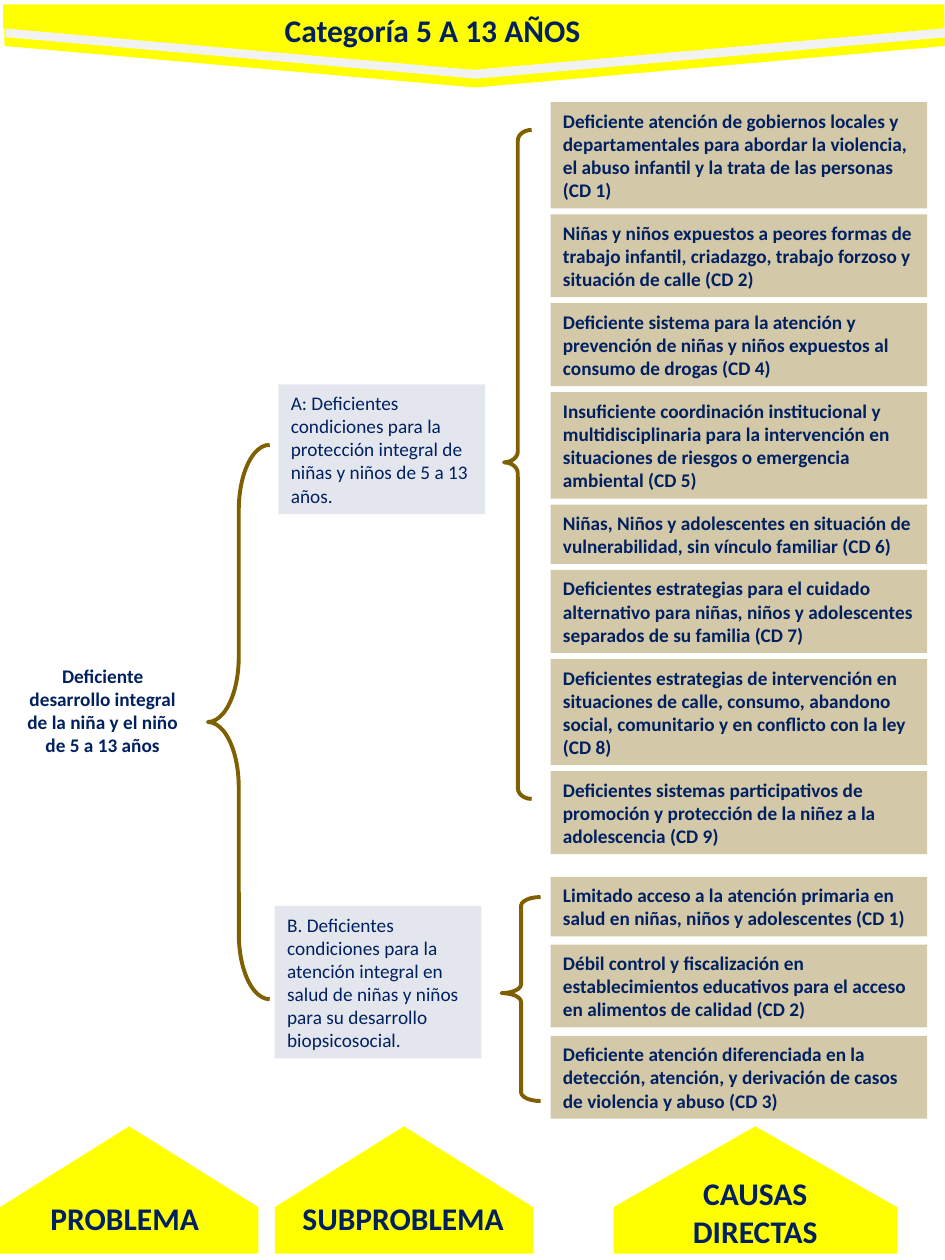
from lxml import etree
from pptx import Presentation
from pptx.dml.color import RGBColor
from pptx.enum import shapes, text
from pptx.oxml import ns
from pptx.util import Pt

COLORS = {"navy": "002060", "brown": "7F6000", "yellow": "FFFF00", "gray": "F2F2F2"}
FONT = "Calibri"

TITLE = ("Categoría 5 A 13 AÑOS", (155.5, 2.9, 228.2, 28.8))
PROBLEM = ("Deficiente desarrollo integral de la niña y el niño de 5 a 13 años",
           (4.3, 375.8, 108.7, 60.5))
SUBPROBLEMS = [
    ("A: Deficientes condiciones para la protección integral de niñas y niños "
     "de 5 a 13 años.", (159.1, 219.6, 118.1, 74.2)),
    ("B. Deficientes condiciones para la atención integral en salud de niñas y "
     "niños para su desarrollo biopsicosocial.", (157, 517.7, 118.1, 87.1)),
]
# Each group: top, gap, then (lines of text, wording)
CAUSE_GROUPS = [
    (58.3, 3.4, [
        (4, "Deficiente atención de gobiernos locales y departamentales para abordar "
            "la violencia, el abuso infantil y la trata de las personas\n(CD 1)"),
        (3, "Niñas y niños expuestos a peores formas de trabajo infantil, criadazgo, "
            "trabajo forzoso y situación de calle (CD 2)"),
        (3, "Deficiente sistema para la atención y prevención de niñas y niños "
            "expuestos al consumo de drogas (CD 4)"),
        (4, "Insuficiente coordinación institucional y multidisciplinaria para la "
            "intervención en situaciones de riesgos o emergencia ambiental (CD 5)"),
        (2, "Niñas, Niños y adolescentes en situación de vulnerabilidad, sin vínculo "
            "familiar (CD 6)"),
        (3, "Deficientes estrategias para el cuidado alternativo para niñas, niños y "
            "adolescentes separados de su familia (CD 7)"),
        (4, "Deficientes estrategias de intervención en situaciones de calle, consumo, "
            "abandono social, comunitario y en conflicto con la ley\n(CD 8)"),
        (3, "Deficientes sistemas participativos de promoción y protección de la niñez "
            "a la adolescencia (CD 9)"),
    ]),
    (501.1, 4.7, [
        (2, "Limitado acceso a la atención primaria en salud en niñas, niños y "
            "adolescentes (CD 1)"),
        (3, "Débil control y fiscalización en establecimientos educativos para el "
            "acceso en alimentos de calidad (CD 2)"),
        (3, "Deficiente atención diferenciada en la detección, atención, y derivación "
            "de casos de violencia y abuso (CD 3)"),
    ]),
]
CAUSE_LEFT, CAUSE_WIDTH = 314.6, 215.3
LINE_HEIGHT, BOX_PADDING = 13.4, 7.2

# Centre x, centre y, colour
BANNER_LAYERS = [(271.4, 31.3, "yellow"), (272.2, 26.3, "gray"), (270.7, 21.2, "yellow")]
# Arrow centre x, arrow breadth, label, label box
COLUMNS = [
    (73.8, 147.6, "PROBLEMA", (10.1, 681.8, 122.4, 28.8)),
    (230.8, 147.6, "SUBPROBLEMA", (161.3, 681.8, 138.2, 28.8)),
    (431.6, 162, "CAUSAS DIRECTAS", (379.4, 667.4, 104.4, 51.1)),
]
# Box, curve, height of the point
BRACES = [
    ((118.8, 254.2, 35.3, 316.8), 1.058, 0.5),
    ((288, 74.2, 15.8, 382.3), 0.394, 0.497),
    ((286.6, 512.6, 22.3, 116.6), 0.224, 0.471),
]


def rgb(name):
    return RGBColor.from_string(COLORS[name])


def write(shape, wording, size=11, bold=True, align=text.PP_ALIGN.LEFT,
          anchor=text.MSO_ANCHOR.TOP):
    frame = shape.text_frame
    frame.text = wording
    frame.word_wrap = True
    frame.auto_size = text.MSO_AUTO_SIZE.NONE
    frame.vertical_anchor = anchor
    frame.margin_left = frame.margin_right = Pt(7.2)
    frame.margin_top = frame.margin_bottom = Pt(3.6)
    for paragraph in frame.paragraphs:
        paragraph.alignment = align
        paragraph.line_spacing = 1.0
        paragraph.space_before = Pt(0)
        font = paragraph.font
        for run in paragraph.runs:
            font = run.font
            font.name, font.size, font.bold = FONT, Pt(size), bold
            font.color.rgb = rgb("navy")


def add_preset(slide, preset, box, fill=None, opacity=100):
    """Add a flat shape; opacity is a percentage of the fill colour."""
    shape = slide.shapes.add_shape(preset, *map(Pt, box))
    shape.shadow.inherit = False
    shape.line.fill.background()
    if fill is None:
        shape.fill.background()
        return shape
    shape.fill.solid()
    shape.fill.fore_color.rgb = rgb(fill)
    if opacity < 100:
        color = shape.element.spPr.find(".//" + ns.qn("a:srgbClr"))
        etree.SubElement(color, ns.qn("a:alpha"), val=str(opacity * 1000))
    return shape


def add_arrow(slide, center_x, center_y, length, breadth, rotation, fill):
    box = (center_x - length / 2, center_y - breadth / 2, length, breadth)
    arrow = add_preset(slide, shapes.MSO_SHAPE.RIGHT_ARROW, box, fill)
    arrow.adjustments[0], arrow.adjustments[1] = 1, 0.635
    arrow.rotation = rotation


def add_label(slide, wording, box, **style):
    label = slide.shapes.add_textbox(*map(Pt, box))
    write(label, wording, align=text.PP_ALIGN.CENTER, **style)


def add_panel(slide, wording, box, fill, opacity, **style):
    panel = add_preset(slide, shapes.MSO_SHAPE.RECTANGLE, box, fill, opacity)
    write(panel, wording, anchor=text.MSO_ANCHOR.MIDDLE, **style)


def main():
    prs = Presentation()
    prs.slide_width, prs.slide_height = Pt(540), Pt(720)
    slide = prs.slides.add_slide(prs.slide_layouts[5])

    for center_x, center_y, fill in BANNER_LAYERS:
        add_arrow(slide, center_x, center_y, 37.4, 537.8, 90, fill)

    title = slide.shapes.title
    wording, box = TITLE
    title.left, title.top, title.width, title.height = map(Pt, box)
    write(title, wording, size=18)
    title.element.getparent().append(title.element)  # in front of the banner

    add_label(slide, *PROBLEM)
    for wording, box in SUBPROBLEMS:
        add_panel(slide, wording, box, "navy", 11, bold=False)

    for top, gap, causes in CAUSE_GROUPS:
        for lines, wording in causes:
            height = lines * LINE_HEIGHT + BOX_PADDING
            add_panel(slide, wording, (CAUSE_LEFT, top, CAUSE_WIDTH, height), "brown", 34)
            top += height + gap

    for box, curve, point in BRACES:
        brace = add_preset(slide, shapes.MSO_SHAPE.LEFT_BRACE, box)
        brace.adjustments[0], brace.adjustments[1] = curve, point
        brace.line.color.rgb = rgb("brown")
        brace.line.width = Pt(2.25)

    for center_x, breadth, wording, box in COLUMNS:
        add_arrow(slide, center_x, 680, 72.7, breadth, 270, "yellow")
        add_label(slide, wording, box, size=18)

    prs.save("out.pptx")


if __name__ == "__main__":
    main()
